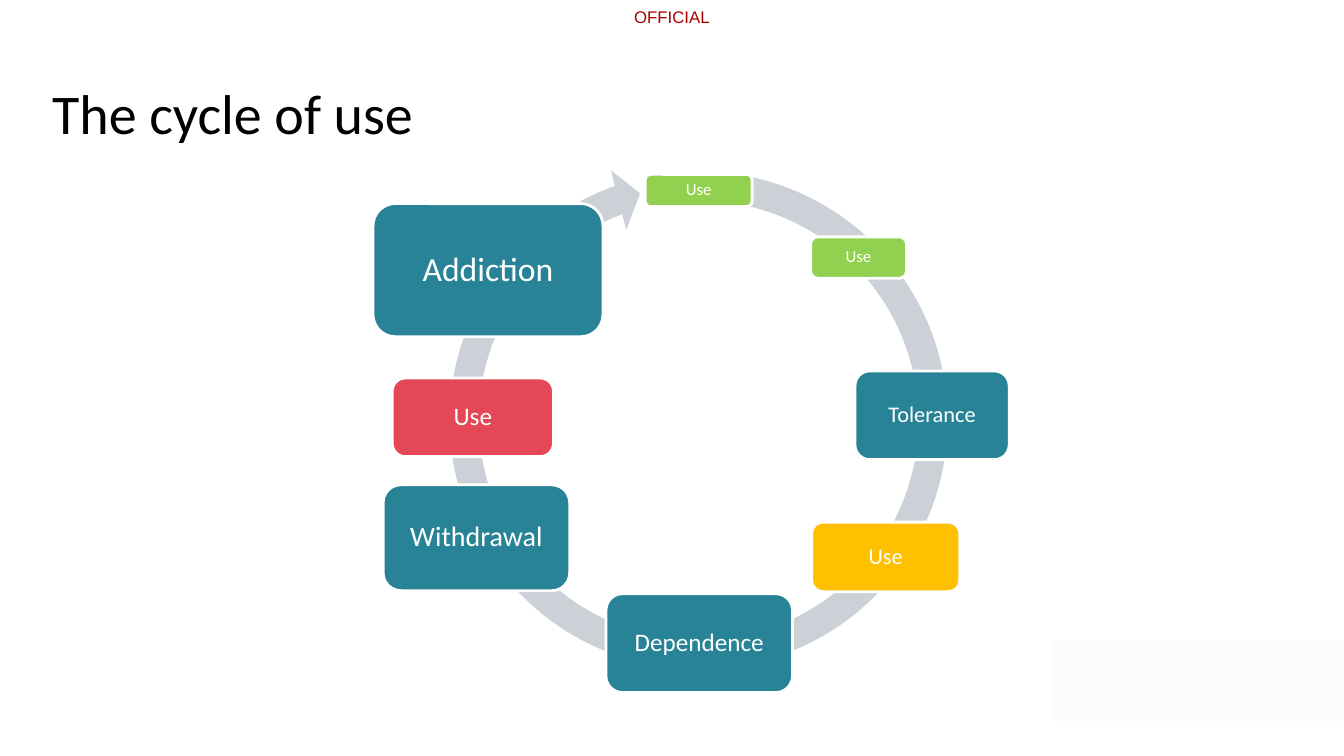
"""Build the slide showing the cycle of use from first use to addiction."""
from typing import NamedTuple

from pptx import Presentation
from pptx.dml.color import RGBColor
from pptx.enum.shapes import MSO_SHAPE as Preset
from pptx.enum.text import MSO_ANCHOR as Anchor, PP_ALIGN as Align
from pptx.shapes.autoshape import Shape
from pptx.slide import Slide
from pptx.util import Emu, Pt

EMU_PER_PX = 9144
WHITE = RGBColor(0xFF, 0xFF, 0xFF)
BLACK = RGBColor(0x00, 0x00, 0x00)
DARK_RED = RGBColor(0xA8, 0x00, 0x00)
GREY = RGBColor(0xCC, 0xD1, 0xD8)
PALE = RGBColor(0xFC, 0xFC, 0xFC)
GREEN = RGBColor(0x92, 0xD0, 0x50)
TEAL = RGBColor(0x28, 0x83, 0x96)
AMBER = RGBColor(0xFF, 0xC0, 0x00)
RED = RGBColor(0xE4, 0x48, 0x56)


class Box(NamedTuple):
    """Place and size in px."""
    left: int
    top: int
    width: int
    height: int


class Stage(NamedTuple):
    """One step of the cycle."""
    label: str
    box: Box
    color: RGBColor
    size: int
    inset: int


STAGES = [
    Stage("Use", Box(640, 173, 106, 32), GREEN, 12, 5),
    Stage("Use", Box(804, 235, 95, 41), GREEN, 12, 5),
    Stage("Tolerance", Box(848, 368, 153, 88), TEAL, 16, 7),
    Stage("Use", Box(805, 518, 147, 69), AMBER, 16, 7),
    Stage("Dependence", Box(601, 589, 185, 98), TEAL, 18, 7),
    Stage("Withdrawal", Box(380, 481, 185, 105), TEAL, 20, 8),
    Stage("Use", Box(389, 375, 160, 78), RED, 18, 7),
    Stage("Addiction", Box(370, 202, 228, 132), TEAL, 24, 10),
]
ARROW_ADJUSTMENTS = (0.055, 3.307, 150.013, 166.766, 0.058)


def px(length: int) -> Emu:
    """Turn px into EMU."""
    return Emu(length * EMU_PER_PX)


def place(box: Box) -> list[Emu]:
    """Turn a box into EMU lengths."""
    return [px(length) for length in box]


def write(shape: Shape, text: str, size: int, color: RGBColor, inset: int,
          font: str = "Calibri", align: Align = Align.LEFT,
          anchor: Anchor = Anchor.MIDDLE, wrap: bool = True) -> None:
    """Fill a shape with one run of text."""
    frame = shape.text_frame
    frame.word_wrap = wrap
    frame.vertical_anchor = anchor
    frame.margin_left = frame.margin_right = px(inset)
    frame.margin_top = frame.margin_bottom = px(inset)
    paragraph = frame.paragraphs[0]
    paragraph.alignment = align
    paragraph.line_spacing = 0.9 if align == Align.CENTER else 1.0
    run = paragraph.add_run()
    run.text = text
    run.font.name = font
    run.font.size = Pt(size)
    run.font.color.rgb = color


def add_filled(slide: Slide, preset: Preset, box: Box, color: RGBColor) -> Shape:
    """Add a preset shape with a plain fill and no outline."""
    shape = slide.shapes.add_shape(preset, *place(box))
    shape.shadow.inherit = False
    shape.fill.solid()
    shape.fill.fore_color.rgb = color
    shape.line.fill.background()
    return shape


def add_stage(slide: Slide, stage: Stage) -> None:
    """Add a labelled rounded box with a white outline."""
    shape = add_filled(slide, Preset.ROUNDED_RECTANGLE, stage.box, stage.color)
    shape.line.color.rgb = WHITE
    shape.line.width = Pt(2)
    write(shape, stage.label, stage.size, WHITE, stage.inset, align=Align.CENTER)


def main() -> None:
    """Build and save the presentation."""
    presentation = Presentation()
    presentation.slide_width, presentation.slide_height = px(1333), px(750)
    slide = presentation.slides.add_slide(presentation.slide_layouts[6])

    marking = slide.shapes.add_textbox(*place(Box(629, 7, 80, 20)))
    write(marking, "OFFICIAL", 12, DARK_RED, 0, "Arial", anchor=Anchor.TOP, wrap=False)

    arrow = add_filled(slide, Preset.CIRCULAR_ARROW, Box(430, 154, 526, 526), GREY)
    for index, value in enumerate(ARROW_ADJUSTMENTS):
        arrow.adjustments[index] = value
    for stage in STAGES:
        add_stage(slide, stage)

    title = slide.shapes.add_textbox(*place(Box(42, 55, 450, 113)))
    write(title, "The cycle of use", 40, BLACK, 10)
    add_filled(slide, Preset.RECTANGLE, Box(1046, 635, 287, 80), PALE)
    presentation.save("out.pptx")


if __name__ == "__main__":
    main()
